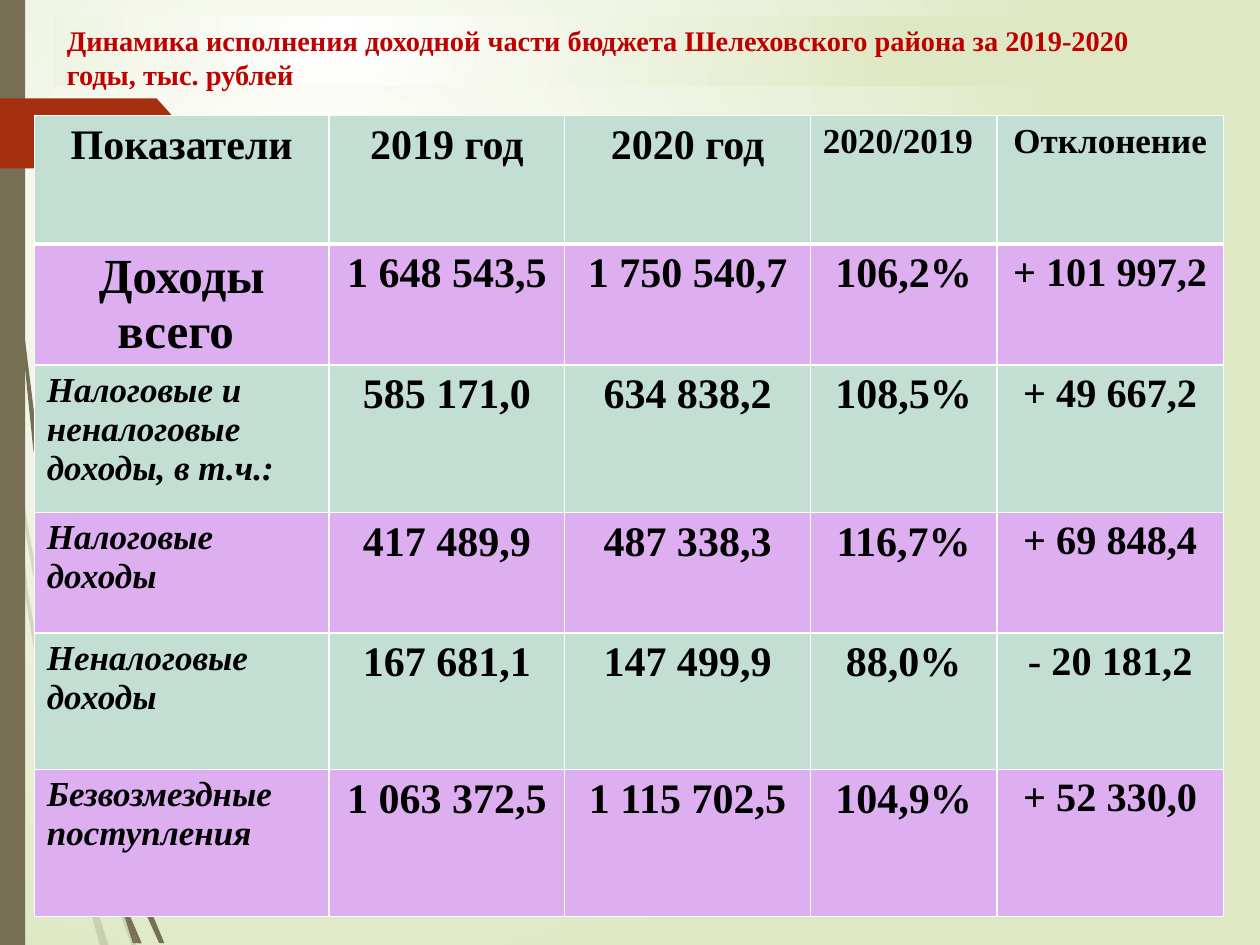
from lxml import etree
from pptx import Presentation
from pptx.dml.color import RGBColor
from pptx.enum.shapes import MSO_SHAPE
from pptx.enum.text import MSO_ANCHOR, MSO_AUTO_SIZE, PP_ALIGN
from pptx.oxml.ns import qn
from pptx.util import Pt

LEFT, MID = PP_ALIGN.LEFT, PP_ALIGN.CENTER
TOP, NOFIT = MSO_ANCHOR.TOP, MSO_AUTO_SIZE.NONE
RECT, ARROW = MSO_SHAPE.RECTANGLE, MSO_SHAPE.PENTAGON
BROWN, RUST, RED = "766F54", "A53010", "C00000"
WHITE, CREAM, MINT, LILAC = "FFFFFF", "DFE8C4", "C3DED3", "DDAFF1"
FONT = "Times New Roman"

PALE = [
    [(28.8, 375.8), (42.5, 431.3), (42.5, 421.9), (31, 374.4), (18, 312),
     (7.2, 248.4), (8.6, 270.7), (17.9, 323.5)],
    [(46.1, 491.8), (34.6, 445.7), (15.8, 337.7), (8.6, 270.7), (5.8, 252),
     (13.7, 338.4), (32.4, 447.1), (46.1, 499), (50.4, 514.1), (49.7, 509)],
    [(46.1, 437), (43.9, 429.1), (43.9, 439.2), (61.2, 499.7), (74.9, 540),
     (77.8, 540), (63.4, 498.2)],
    [(59.8, 540), (61.9, 540), (52.6, 511.9)],
    [(50.4, 514.1), (56.9, 540), (59, 540)],
    [(48.2, 498.2), (46.8, 491.8), (49.7, 509), (50.4, 514.1), (59, 540),
     (59.8, 540), (52.6, 511.9)],
]
DARK = [
    [(3.6, 79.2), (10.1, 167.8), (19.4, 255.6), (33.1, 343.4), (33.8, 346.3),
     (32.4, 329), (32.4, 326.2), (21.6, 255.6), (10.8, 167), (4.3, 78.5),
     (2.9, 34.6), (2.2, 0), (1.4, 0), (2.2, 34.6)],
    [(67.7, 467.3), (65.5, 461.5), (65.5, 472.3), (78.5, 509.8),
     (90.7, 539.3), (93.6, 539.3), (81.4, 508.3)],
    [(79.2, 539.3), (81.4, 539.3), (72, 517.7)],
    [(69.8, 519.8), (75.6, 539.3), (77.8, 539.3)],
    [(69.1, 508.3), (65.5, 497.5), (69.1, 516.2), (69.8, 519.8),
     (77.8, 539.3), (79.2, 539.3), (72, 517.7)],
]

HEAD = ["Показатели", "2019 год", "2020 год", "2020/2019", "Отклонение "]
ROWS = [
    ["Доходы всего ", "1 648 543,5", "1 750 540,7", "106,2%", "+ 101 997,2"],
    ["Налоговые и неналоговые доходы, в т.ч.:", "585 171,0", "634 838,2",
     "108,5%", "+ 49 667,2"],
    ["Налоговые\nдоходы", "417 489,9", "487 338,3", "116,7%", "+ 69 848,4"],
    ["Неналоговые\nдоходы", "167 681,1", "147 499,9", "88,0%", "- 20 181,2"],
    ["Безвозмездные\nпоступления", "1 063 372,5", "1 115 702,5", "104,9%",
     "+ 52 330,0"],
]
WIDTHS = [168.5, 134.6, 140.4, 106.6, 129.6]
HEIGHTS = [73.4, 69.1, 84.2, 69.1, 77.8, 84.2]


def paint(code):
    return RGBColor.from_string(code)


def write(frame, text, size, color="000000", italic=False, align=LEFT):
    frame.text = text
    for para in frame.paragraphs:
        para.alignment = align
        for run in para.runs:
            font = run.font
            font.name, font.size = FONT, Pt(size)
            font.bold, font.italic = True, italic
            font.color.rgb = paint(color)


def glow(fill, root):
    fill.gradient()
    for stop, code in zip(fill.gradient_stops, (WHITE, CREAM)):
        stop.color.rgb = paint(code)
    grad = root.find(".//" + qn("a:gradFill"))
    grad.remove(grad.find(qn("a:lin")))
    path = etree.Element(qn("a:path"), path="circle")
    etree.SubElement(path, qn("a:fillToRect"),
                     l="50000", t="50000", r="100000", b="100000")
    grad.find(qn("a:gsLst")).addnext(path)


def coat(shape, color, alpha=100):
    shape.shadow.inherit = False
    shape.fill.solid()
    shape.fill.fore_color.rgb = paint(color)
    shape.line.fill.background()
    if alpha < 100:
        tint = shape.fill._xPr.find(".//" + qn("a:srgbClr"))
        etree.SubElement(tint, qn("a:alpha"), val=str(alpha * 1000))


def strand(slide, points, alpha):
    pen = slide.shapes.build_freeform(*points[0], scale=Pt(1))
    pen.add_line_segments(points[1:], close=True)
    coat(pen.convert_to_shape(), BROWN, alpha)


def decor(slide, height):
    for group, alpha in ((PALE, 20), (DARK, 100)):
        for points in group:
            strand(slide, points, alpha)
    bar = slide.shapes.add_shape(RECT, 0, 0, Pt(14.4), Pt(height))
    coat(bar, BROWN)
    tag = slide.shapes.add_shape(ARROW, 0, Pt(56.2), Pt(107.5), Pt(40))
    tag.adjustments[0] = 0.45
    coat(tag, RUST)


def title(slide, x, y, w, h):
    box = slide.shapes.title
    box.left, box.top, box.width, box.height = Pt(x), Pt(y), Pt(w), Pt(h)
    glow(box.fill, box.element)
    frame = box.text_frame
    frame.auto_size, frame.vertical_anchor = NOFIT, TOP
    frame.word_wrap = True
    write(frame, "Динамика исполнения доходной части бюджета Шелеховского "
          "района за 2019-2020 годы, тыс. рублей", 16.2, RED)


def edge(cell, row):
    wide = {"T": 3 if row == 1 else 1, "B": 3 if row == 0 else 1}
    props = cell._tc.get_or_add_tcPr()
    for side in "LRTB":
        line = etree.SubElement(props, qn("a:ln" + side),
                                w=str(Pt(wide.get(side, 1))))
        fill = etree.SubElement(line, qn("a:solidFill"))
        etree.SubElement(fill, qn("a:srgbClr"), val=WHITE)


def style(row, col):
    if row == 0:
        return {"size": 24 if col < 3 else 20, "align": LEFT if col == 3 else MID}
    if col == 0:
        if row == 1:
            return {"size": 28, "align": MID}
        return {"size": 20, "italic": True}
    return {"size": 23 if col == 4 else 24, "align": MID}


def grid(slide, x, y):
    data = [HEAD] + ROWS
    table = slide.shapes.add_table(
        len(data), len(HEAD), Pt(x), Pt(y),
        Pt(sum(WIDTHS)), Pt(sum(HEIGHTS))).table
    for col, width in zip(table.columns, WIDTHS):
        col.width = Pt(width)
    for row, height in zip(table.rows, HEIGHTS):
        row.height = Pt(height)
    for r, texts in enumerate(data):
        for c, text in enumerate(texts):
            cell = table.cell(r, c)
            write(cell.text_frame, text, **style(r, c))
            edge(cell, r)
            cell.fill.solid()
            cell.fill.fore_color.rgb = paint(LILAC if r % 2 else MINT)


def main():
    deck = Presentation()
    deck.slide_width, deck.slide_height = Pt(720), Pt(540)
    slide = deck.slides.add_slide(deck.slide_layouts[5])
    glow(slide.background.fill, slide.element)
    decor(slide, 540)
    title(slide, 31, 9.4, 650, 39.6)
    grid(slide, 19.6, 66)
    deck.save("out.pptx")


if __name__ == "__main__":
    main()
